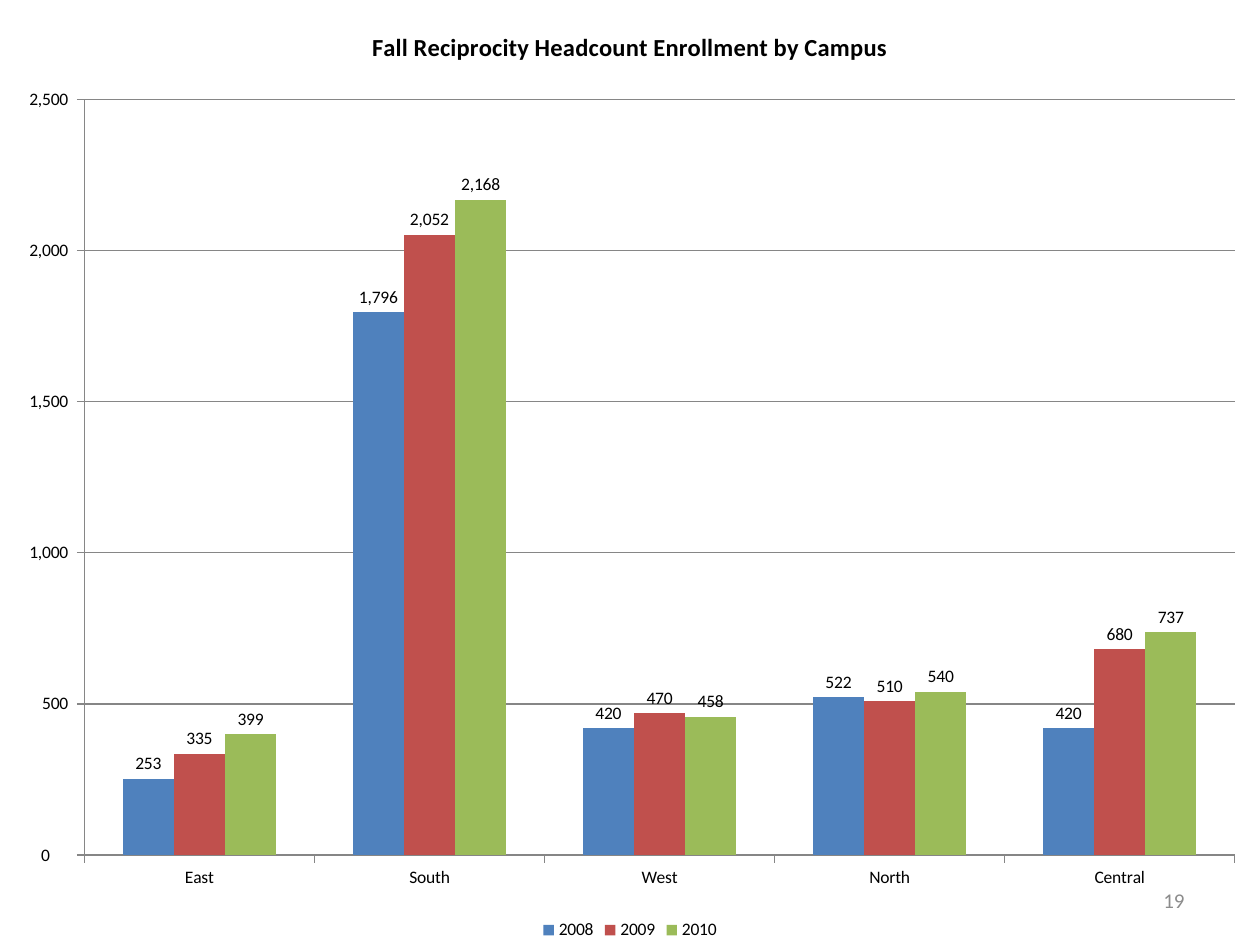
"""Build the slide with the column chart of reciprocity enrollment by campus."""
from dataclasses import dataclass

from lxml import etree
from pptx import Presentation
from pptx import util as u
from pptx.chart import data as chart_data
from pptx.dml.color import RGBColor
from pptx.enum import chart as ch
from pptx.enum import text
from pptx.oxml.ns import qn


@dataclass(frozen=True)
class Theme:
    """Colours and type sizes of the slide."""
    font: str = "Calibri"
    ink: str = "000000"
    muted: str = "8C8C8C"
    rule: str = "868686"
    title: int = 14
    number: int = 12
    body: int = 10


@dataclass(frozen=True)
class YearSeries:
    """Headcount of one fall term, campus by campus."""
    year: str
    headcounts: tuple[int, ...]
    color: str


@dataclass(frozen=True)
class Box:
    """Position and size in centimetres, or as fractions of a chart."""
    x: float
    y: float
    w: float
    h: float

    def lengths(self) -> tuple[u.Cm, ...]:
        """Return the four values as lengths."""
        return tuple(u.Cm(v) for v in (self.x, self.y, self.w, self.h))


THEME = Theme()
SLIDE = Box(0, 0, 25.4, 19.05)
PLOT = Box(0.067, 0.105, 0.913, 0.8)
NUMBER = Box(18.2, 17.65, 5.93, 1.01)
HEADING = "Fall Reciprocity Headcount Enrollment by Campus"
CAMPUSES = ("East", "South", "West", "North", "Central")
YEARS = (
    YearSeries("2008", (253, 1796, 420, 522, 420), "4F81BD"),
    YearSeries("2009", (335, 2052, 470, 510, 680), "C0504D"),
    YearSeries("2010", (399, 2168, 458, 540, 737), "9BBB59"),
)
ACCOUNTING = r'_(* #,##0_);_(* \(#,##0\);_(* "{}"??_);_(@_)'


def style_font(font, size: int, color: str, bold: bool = False) -> None:
    """Apply the theme typeface with a size and colour."""
    font.name, font.size, font.bold = THEME.font, u.Pt(size), bold
    font.color.rgb = RGBColor.from_string(color)


def style_line(line) -> None:
    """Draw a thin grey rule."""
    line.color.rgb = RGBColor.from_string(THEME.rule)
    line.width = u.Pt(0.75)


def place_plot(chart, box: Box) -> None:
    """Fix the inner plot area as fractions of the chart."""
    area = chart.plots[0]._element.getparent()
    for old in area.findall(qn("c:layout")):
        area.remove(old)
    layout = etree.Element(qn("c:layout"))
    manual = etree.SubElement(layout, qn("c:manualLayout"))
    values = {"layoutTarget": "inner", "xMode": "edge", "yMode": "edge",
              "x": box.x, "y": box.y, "w": box.w, "h": box.h}
    for tag, value in values.items():
        etree.SubElement(manual, qn(f"c:{tag}")).set("val", str(value))
    area.insert(0, layout)


def style_axes(chart) -> None:
    """Set the scale, ticks and rules of both axes."""
    for axis in (chart.category_axis, chart.value_axis):
        axis.major_tick_mark = ch.XL_TICK_MARK.OUTSIDE
        axis.minor_tick_mark = ch.XL_TICK_MARK.NONE
        style_line(axis.format.line)
    values = chart.value_axis
    values.minimum_scale, values.maximum_scale, values.major_unit = 0, 2500, 500
    values.has_major_gridlines = True
    style_line(values.major_gridlines.format.line)
    values.tick_labels.number_format = ACCOUNTING.format(0)
    values.tick_labels.number_format_is_linked = False


def style_series(series, color: str) -> None:
    """Colour one year's columns and label them above."""
    series.format.fill.solid()
    series.format.fill.fore_color.rgb = RGBColor.from_string(color)
    series.invert_if_negative = False
    labels = series.data_labels
    labels.show_value = True
    labels.position = ch.XL_LABEL_POSITION.OUTSIDE_END
    labels.number_format = ACCOUNTING.format("-")
    labels.number_format_is_linked = False
    style_font(labels.font, THEME.body, THEME.ink)


def add_enrollment_chart(s) -> None:
    """Add the clustered columns across the whole slide."""
    data = chart_data.CategoryChartData()
    data.categories = CAMPUSES
    for item in YEARS:
        data.add_series(item.year, item.headcounts)
    chart = s.shapes.add_chart(
        ch.XL_CHART_TYPE.COLUMN_CLUSTERED, *SLIDE.lengths(), data).chart
    style_font(chart.font, THEME.body, THEME.ink)
    chart.has_title = True
    p = chart.chart_title.text_frame.paragraphs[0]
    p.text = HEADING
    style_font(p.font, THEME.title, THEME.ink, bold=True)
    chart.chart_title.include_in_layout = False
    chart.has_legend = True
    chart.legend.position = ch.XL_LEGEND_POSITION.BOTTOM
    chart.legend.include_in_layout = False
    plot = chart.plots[0]
    plot.gap_width, plot.overlap, plot.vary_by_categories = 150, 0, False
    for series, item in zip(plot.series, YEARS):
        style_series(series, item.color)
    style_axes(chart)
    place_plot(chart, PLOT)


def add_slide_number(s, number: str) -> None:
    """Add the page number at the lower right."""
    tf = s.shapes.add_textbox(*NUMBER.lengths()).text_frame
    tf.word_wrap = True
    tf.vertical_anchor = text.MSO_ANCHOR.MIDDLE
    p = tf.paragraphs[0]
    p.text, p.alignment = number, text.PP_ALIGN.RIGHT
    style_font(p.font, THEME.number, THEME.muted)


def main() -> None:
    """Build and save the presentation."""
    prs = Presentation()
    prs.slide_width, prs.slide_height = u.Cm(SLIDE.w), u.Cm(SLIDE.h)
    s = prs.slides.add_slide(prs.slide_layouts[6])
    add_enrollment_chart(s)
    add_slide_number(s, "19")
    prs.save("out.pptx")


if __name__ == "__main__":
    main()
